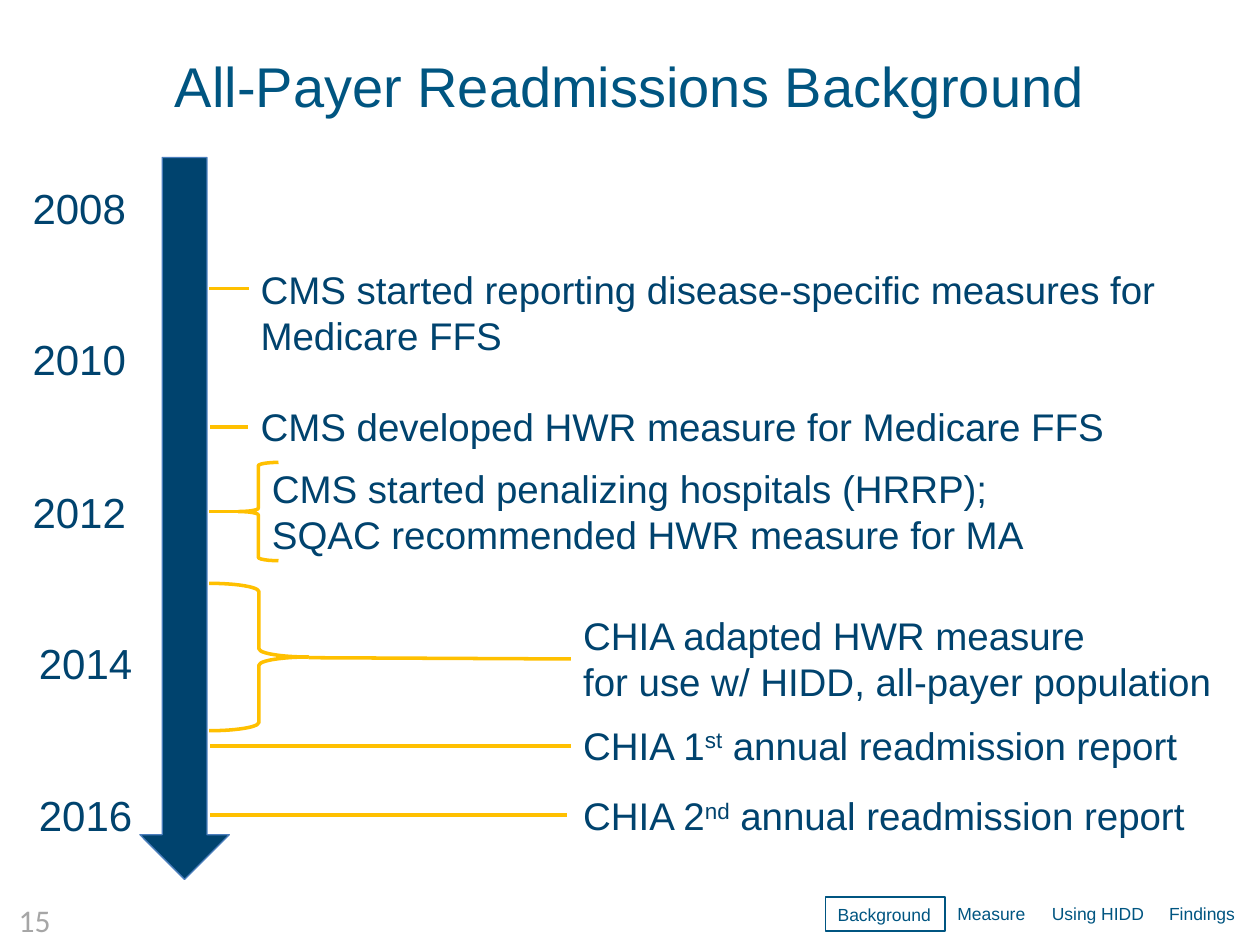
import pptx
import pptx.util
import pptx.dml.color
import pptx.enum.shapes
import pptx.enum.text
import pptx.oxml.ns
from dataclasses import dataclass
from lxml import etree

PX = 9144  # 100 px to the inch
SHAPE = pptx.enum.shapes.MSO_SHAPE
ALIGN = pptx.enum.text.PP_ALIGN
ANCHOR = pptx.enum.text.MSO_ANCHOR
AUTO = pptx.enum.text.MSO_AUTO_SIZE


@dataclass(frozen=True)
class Theme:
    font: str = "Arial"
    number_font: str = "Calibri"
    title: str = "005581"
    navy: str = "00436E"
    edge: str = "4B7EBC"
    gold: str = "FFC000"
    grey: str = "A6A6A6"
    title_pt: int = 32
    year_pt: int = 24
    event_pt: int = 22
    number_pt: int = 18
    nav_pt: int = 10


T = Theme()


def emu(*lengths):
    return [pptx.util.Emu(n * PX) for n in lengths]


def rgb(code):
    return pptx.dml.color.RGBColor.from_string(code)


def set_all(target, values):
    for name, value in values.items():
        setattr(target, name, value)


def write(sp, paragraphs, size, color, font=T.font, align=ALIGN.LEFT, **frame):
    """Fill a shape; a paragraph is a string or a list of (text, baseline)."""
    tf = sp.text_frame
    set_all(tf, {"word_wrap": True, "auto_size": AUTO.SHAPE_TO_FIT_TEXT, **frame})
    for i, runs in enumerate(paragraphs):
        p = tf.add_paragraph() if i else tf.paragraphs[0]
        p.alignment = align
        for text, baseline in [(runs, 0)] if isinstance(runs, str) else runs:
            r = p.add_run()
            r.text = text
            set_all(r.font, {"name": font, "size": pptx.util.Pt(size)})
            r.font.color.rgb = rgb(color)
            if baseline:
                r._r.get_or_add_rPr().set("baseline", str(baseline * 1000))


def add_text(s, box, paragraphs, size, color, **options):
    sp = s.shapes.add_textbox(*emu(*box))
    write(sp, paragraphs, size, color, **options)


def outline(sp, color, width):
    sp.line.color.rgb = rgb(color)
    sp.line.width = pptx.util.Pt(width)


def add_outlined(s, kind, box, color, width, fill=None):
    sp = s.shapes.add_shape(kind, *emu(*box))
    sp.shadow.inherit = False
    if fill:
        sp.fill.solid()
        sp.fill.fore_color.rgb = rgb(fill)
    else:
        sp.fill.background()
    outline(sp, color, width)
    return sp


def add_rule(s, x1, y1, x2, y2):
    line = s.shapes.add_connector(
        pptx.enum.shapes.MSO_CONNECTOR.STRAIGHT, *emu(x1, y1, x2, y2))
    outline(line, T.gold, 2)
    etree.SubElement(line._element.spPr, pptx.oxml.ns.qn("a:effectLst"))


def add_title(s, box):
    sp = s.shapes.title
    set_all(sp, dict(zip(("left", "top", "width", "height"), emu(*box))))
    write(sp, ["All-Payer Readmissions Background"], T.title_pt, T.title,
          align=ALIGN.RIGHT, vertical_anchor=ANCHOR.MIDDLE, auto_size=AUTO.NONE)


def add_timeline(s, box):
    """Down arrow with every second year beside it, from 2008 to 2016."""
    x, y, w, h = box
    add_outlined(s, SHAPE.DOWN_ARROW, (x + 95, y, w - 95, h), T.edge, 0.75, T.navy)
    for i, year in enumerate(range(2008, 2017, 2)):
        left = x + (5 if year >= 2014 else 0)
        add_text(s, (left, y + 15 + i * 241 // 2, 95, 50), [str(year)],
                 T.year_pt, T.navy, word_wrap=False)


def add_events(s, box):
    """Event texts, each tied to the arrow's edge by a rule or a brace."""
    x, y, w, h = box
    events = [
        (31, 0, 766, 84,
         ["CMS started reporting disease-specific measures for Medicare FFS"]),
        (31, 109, 795, 47, ["CMS developed HWR measure for Medicare FFS"]),
        (40, 158, 651, 84, ["CMS started penalizing hospitals (HRRP);",
                            "SQAC recommended HWR measure for MA"]),
        (287, 275, 529, 84, ["CHIA adapted HWR measure",
                             "for use w/ HIDD, all-payer population"]),
    ]
    for top, number, suffix in ((362, 1, "st"), (418, 2, "nd")):
        events.append((287, top, 529, 47, [[
            (f"CHIA {number}", 0), (suffix, 30), (" annual readmission report", 0)]]))
    for dx, dy, width, height, paragraphs in events:
        add_text(s, (x + dx, y + dy, width, height), paragraphs, T.event_pt, T.navy)

    rules = [(0, 23, 32, 23), (1, 133, 31, 133), (0, 200, 32, 200),
             (79, 316, 287, 317), (1, 386, 287, 386), (1, 441, 284, 441)]
    for x1, y1, x2, y2 in rules:
        add_rule(s, x + x1, y + y1, x + x2, y + y2)
    add_outlined(s, SHAPE.RIGHT_BRACE, (x, y + 257, 79, 117), T.gold, 2)
    add_outlined(s, SHAPE.LEFT_BRACE, (x + 23, y + 161, 32, 78), T.gold, 2)


def add_section_nav(s, box, current):
    x, y, w, h = box
    sections = {"Background": 95, "Measure": 75, "Using HIDD": 93, "Findings": 73}
    for name, width in sections.items():
        cell = (x, y, width, h)
        if name == current:
            sp = add_outlined(s, SHAPE.RECTANGLE, cell, T.title, 0.75)
            write(sp, [name], T.nav_pt, T.title, word_wrap=False)
        else:
            add_text(s, cell, [name], T.nav_pt, T.title, word_wrap=False)
        x += width


def add_page_number(s, box, number):
    add_text(s, box, [str(number)], T.number_pt, T.grey, font=T.number_font,
             align=ALIGN.RIGHT, word_wrap=False)


def main():
    prs = pptx.Presentation()
    prs.slide_width, prs.slide_height = emu(1000, 750)
    s = prs.slides.add_slide(prs.slide_layouts[5])
    add_page_number(s, (0, 710, 50, 40), 15)
    add_title(s, (21, 21, 850, 93))
    add_timeline(s, (16, 125, 166, 573))
    add_events(s, (166, 206, 826, 465))
    add_section_nav(s, (655, 712, 336, 27), "Background")
    prs.save("out.pptx")


if __name__ == "__main__":
    main()
